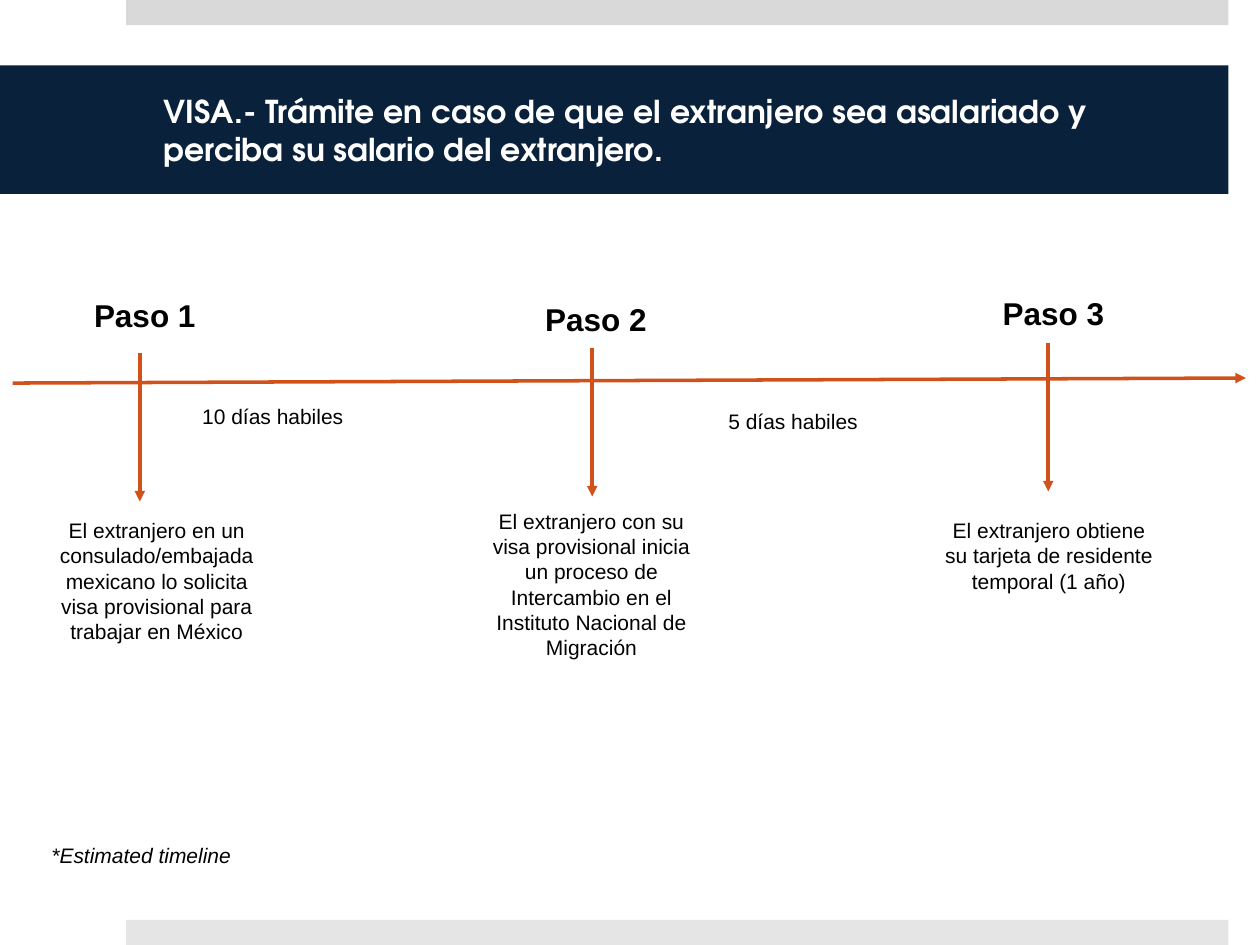
from lxml import etree
from pptx import Presentation
from pptx.dml.color import RGBColor
from pptx.enum.shapes import MSO_CONNECTOR as Connector, MSO_SHAPE as Shape
from pptx.enum.text import MSO_ANCHOR as Anchor, PP_ALIGN as Align
from pptx.oxml.ns import qn
from pptx.util import Pt

NAVY = RGBColor(0x09, 0x21, 0x3B)
ORANGE = RGBColor(0xD0, 0x51, 0x1A)
TOP_GREY = RGBColor(0xD9, 0xD9, 0xD9)
BOTTOM_GREY = RGBColor(0xE5, 0xE5, 0xE5)
BLACK = RGBColor(0, 0, 0)
WHITE = RGBColor(0xFF, 0xFF, 0xFF)

HEADING = {"size": Pt(18), "bold": True}
BODY = {"size": Pt(12)}
NOTE = {"size": Pt(12), "italic": True}

presentation = Presentation()
presentation.slide_width, presentation.slide_height = Pt(720), Pt(540)
slide = presentation.slides.add_slide(presentation.slide_layouts[6])


def add_text(shape, text, alignment, font_format):
    frame = shape.text_frame
    frame.word_wrap = True
    paragraph = frame.paragraphs[0]
    paragraph.text = text
    paragraph.alignment = alignment
    for name, value in ({"name": "Arial"} | font_format).items():
        setattr(paragraph.runs[0].font, name, value)
    paragraph.runs[0].font.color.rgb = WHITE if font_format is TITLE else BLACK
    return frame


def add_arrow(left, top, right, bottom):
    arrow = slide.shapes.add_connector(
        Connector.STRAIGHT, Pt(left), Pt(top), Pt(right), Pt(bottom))
    arrow.line.color.rgb = ORANGE
    arrow.line.width = Pt(2)
    etree.SubElement(arrow.line._get_or_add_ln(), qn("a:tailEnd"), type="triangle")
    etree.SubElement(arrow._element.spPr, qn("a:effectLst"))


TITLE = {"name": "TeX Gyre Adventor", "size": Pt(18), "bold": True}

bands = [
    (72, 0, 630, 14.4, TOP_GREY),
    (72, 525.6, 630, 14.4, BOTTOM_GREY),
    (0, 37.4, 702, 73.4, NAVY),
]
for left, top, width, height, color in bands:
    band = slide.shapes.add_shape(Shape.RECTANGLE, Pt(left), Pt(top), Pt(width), Pt(height))
    band.shadow.inherit = False
    band.fill.solid()
    band.fill.fore_color.rgb = color
    band.line.fill.background()

title_frame = add_text(
    band,
    "VISA.- Trámite en caso de que el extranjero sea asalariado y "
    "perciba su salario del extranjero.",
    Align.LEFT, TITLE)
title_format = {
    "vertical_anchor": Anchor.MIDDLE,
    "margin_left": Pt(93.6),
    "margin_right": Pt(21.6),
    "margin_top": Pt(3.6),
    "margin_bottom": Pt(3.6),
}
for name, value in title_format.items():
    setattr(title_frame, name, value)

add_arrow(7.2, 218.9, 712, 216)
for arrow_x, arrow_top in [(79.9, 201.6), (338.4, 198.7), (599, 195.8)]:
    add_arrow(arrow_x, arrow_top, arrow_x, arrow_top + 85)

labels = [
    (41, 165.6, 77.8, 29, "Paso 1", Align.RIGHT, HEADING),
    (298.8, 167.8, 77.8, 29, "Paso 2", Align.RIGHT, HEADING),
    (560.2, 164.2, 77.8, 29, "Paso 3", Align.RIGHT, HEADING),
    (23, 292.3, 133.2, 80, "El extranjero en un consulado/embajada mexicano lo solicita "
     "visa provisional para trabajar en México", Align.CENTER, BODY),
    (271.4, 287, 133.2, 94.3, "El extranjero con su visa provisional inicia un proceso de "
     "Intercambio en el Instituto Nacional de Migración", Align.CENTER, BODY),
    (532.8, 292.3, 133.2, 51, "El extranjero obtiene su tarjeta de residente temporal "
     "(1 año)", Align.CENTER, BODY),
    (89.3, 226.8, 133.2, 21.6, "10 días habiles", Align.CENTER, BODY),
    (386.6, 229.7, 133.2, 21.6, "5 días habiles", Align.CENTER, BODY),
    (22.3, 478, 548, 21.6, "*Estimated timeline", Align.LEFT, NOTE),
]
for left, top, width, height, text, alignment, font_format in labels:
    label = slide.shapes.add_textbox(Pt(left), Pt(top), Pt(width), Pt(height))
    add_text(label, text, alignment, font_format)

presentation.save("out.pptx")
